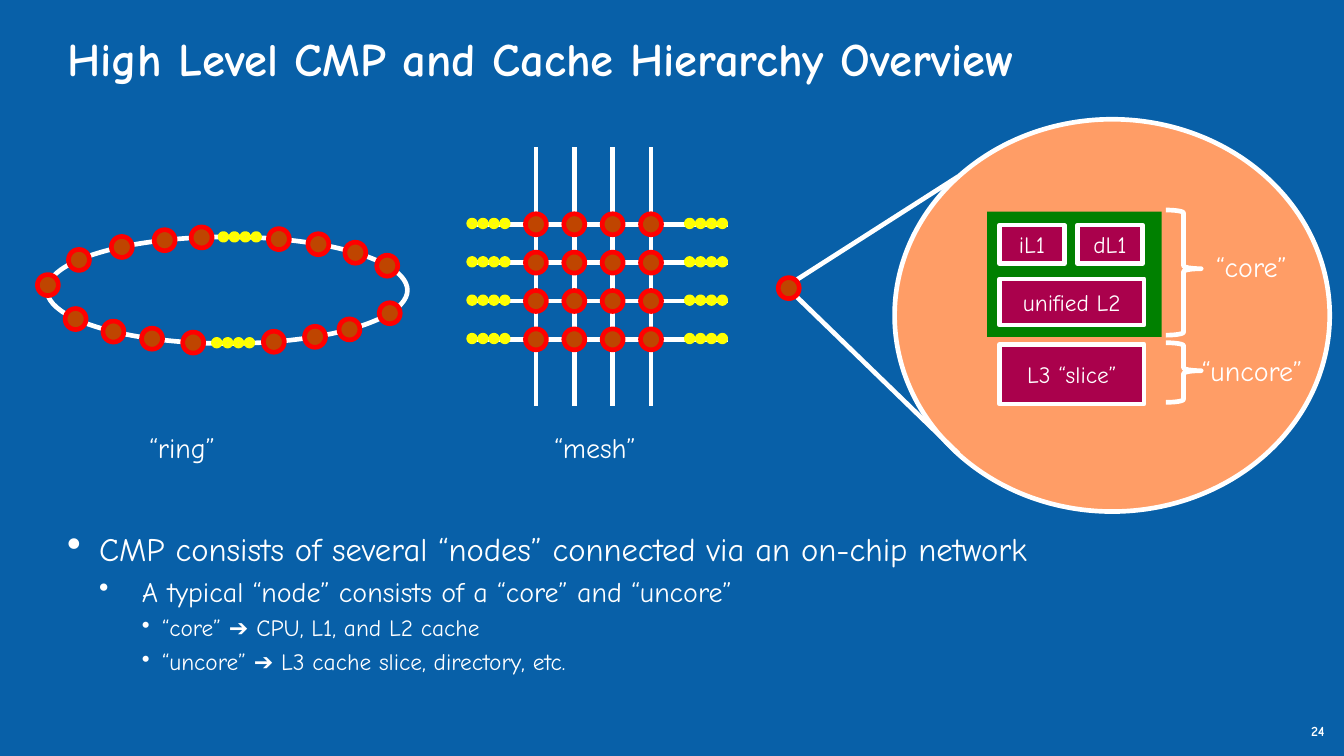
import dataclasses
import itertools
import math

import lxml.etree
import pptx
import pptx.dml.color
import pptx.enum.shapes
import pptx.enum.text
import pptx.oxml.ns
import pptx.util

Inches = pptx.util.Inches
Pt = pptx.util.Pt
Kind = pptx.enum.shapes.MSO_SHAPE
Align = pptx.enum.text.PP_ALIGN
Anchor = pptx.enum.text.MSO_ANCHOR
qn = pptx.oxml.ns.qn


@dataclasses.dataclass(frozen=True)
class Theme:
    face: str = "Comic Neue"
    back: str = "0860A8"
    ink: str = "FFFFFF"
    node: str = "BF4500"
    rim: str = "FF0000"
    dot: str = "F5E647"
    glow: str = "FFFF00"
    disc: str = "FF9D66"
    core: str = "008000"
    cache: str = "AA014C"
    title: int = 40
    label: int = 24
    cell: int = 20
    page: int = 12
    levels: tuple = (28, 24, 20)
    stroke: int = 4


THEME = Theme()
NODE, DOT, STEP = 0.25, 0.08, 0.13


def tint(code):
    return pptx.dml.color.RGBColor.from_string(code)


def style(thing, values):
    for name, value in values.items():
        setattr(thing, name, value)


def write(para, words, size, bold=False):
    run = para.add_run()
    run.text = words
    style(run.font, dict(name=THEME.face, size=Pt(size), bold=bold))
    run.font.color.rgb = tint(THEME.ink)


def text(slide, box, words, size, bold=False, pad=(0, 0)):
    frame = slide.shapes.add_textbox(*map(Inches, box)).text_frame
    side, top = map(Inches, pad)
    style(frame, dict(word_wrap=True, margin_left=side, margin_right=side,
                      margin_top=top, margin_bottom=top))
    if words:
        write(frame.paragraphs[0], words, size, bold)
    return frame


def label(slide, box, words):
    text(slide, box, words, THEME.label, pad=(0.1, 0.05))


def shape(slide, kind, box, fill=None, line=None):
    item = slide.shapes.add_shape(kind, *map(Inches, box))
    item.shadow.inherit = False
    if fill:
        item.fill.solid()
        item.fill.fore_color.rgb = tint(fill)
    else:
        item.fill.background()
    if line:
        item.line.color.rgb = tint(line)
        item.line.width = Pt(THEME.stroke)
    else:
        item.line.fill.background()
    return item


def link(slide, *ends):
    item = slide.shapes.add_connector(
        pptx.enum.shapes.MSO_CONNECTOR.STRAIGHT, *map(Inches, ends))
    item.line.color.rgb = tint(THEME.ink)
    item.line.width = Pt(THEME.stroke)
    lxml.etree.SubElement(item._element.spPr, qn("a:effectLst"))


def node(slide, x, y):
    box = (x - NODE / 2, y - NODE / 2, NODE, NODE)
    shape(slide, Kind.OVAL, box, THEME.node, THEME.rim)


def dots(slide, left, y):
    # Four dots stand for the nodes left out
    for i in range(4):
        box = (left + i * STEP, y - DOT / 2, DOT, DOT)
        shape(slide, Kind.OVAL, box, THEME.dot, THEME.glow)


def ring(slide, box):
    x, y, w, h = box
    shape(slide, Kind.OVAL, box, line=THEME.ink)
    mid, deep = w / 2, h / 2
    # Offsets along the top and bottom arcs; heights follow the ellipse
    arcs = {-1: (0.01, 0.38, 0.89, 1.4, 1.84, 2.76, 3.23, 3.67, 4.05),
            1: (0.34, 0.79, 1.25, 1.74, 2.7, 3.19, 3.6, 4.08)}
    for side, spots in arcs.items():
        for spot in spots:
            rise = math.sqrt(1 - ((spot - mid) / mid) ** 2)
            node(slide, x + spot, y + deep * (1 + side * rise))
    dots(slide, x + 2.06, y)
    dots(slide, x + 1.98, y + h - 0.01)
    label(slide, (x + 1.12, y + 2.26, 1.09, 0.51), "“ring”")


def mesh(slide, box):
    x, y, w, h = box
    pitch = 1.37 / 3
    cols = [x + 0.8 + i * pitch for i in range(4)]
    rows = [y + 0.92 + i * pitch for i in range(4)]
    for col in cols:
        link(slide, col, y, col, y + h)
    for row in rows:
        link(slide, x, row, x + w, row)
        dots(slide, x, row - 0.01)
        dots(slide, x + 2.59, row - 0.01)
    for row, col in itertools.product(rows, cols):
        node(slide, col, row)
    label(slide, (x + 0.92, y + 3.33, 1.28, 0.51), "“mesh”")


def zoom(slide, box):
    x, y, w, h = box
    shape(slide, Kind.OVAL, (x + 1.26, y, w - 1.26, h), THEME.disc, THEME.ink)
    # Rays from the small node to the disc
    link(slide, x + 0.08, y + 1.92, x + 2.02, y + 0.68)
    link(slide, x + 0.08, y + 2.1, x + 2.02, y + 3.98)
    node(slide, x, y + 2.01)
    shape(slide, Kind.RECTANGLE, (x + 2.36, y + 1.1, 2.08, 1.49), THEME.core)
    # Caches
    cells = (("iL1", 2.51, 1.26, 0.77, 0.46), ("dL1", 3.44, 1.26, 0.77, 0.46),
             ("unified L2", 2.51, 1.9, 1.72, 0.55),
             ("L3 “slice”", 2.51, 2.68, 1.72, 0.71))
    for words, left, top, wide, high in cells:
        cell = shape(slide, Kind.RECTANGLE, (x + left, y + top, wide, high),
                     THEME.cache, THEME.ink)
        frame = cell.text_frame
        style(frame, dict(word_wrap=False, vertical_anchor=Anchor.MIDDLE))
        frame.paragraphs[0].alignment = Align.CENTER
        write(frame.paragraphs[0], words, THEME.cell)
    # Braces and their names
    parts = (("“core”", 1.08, 1.49, 4.99, 1.5, 1.16),
             ("“uncore”", 2.66, 0.71, 4.82, 2.74, 1.52))
    for words, top, high, left, drop, wide in parts:
        brace = shape(slide, Kind.RIGHT_BRACE, (x + 4.49, y + top, 0.42, high),
                      line=THEME.ink)
        for i, value in enumerate((0.083, 0.469)):
            brace.adjustments[i] = value
        label(slide, (x + left, y + drop, wide, 0.51), words)


def points(slide, box):
    frame = text(slide, box, "", THEME.label)
    # Left edge, hanging indent and bullet size in percent by level
    forms = ((0.38, 0.38, 125), (0.89, 0.51, 100), (1.13, 0.24, 100))
    items = ((0, "CMP consists of several “nodes” connected via an on-chip network"),
             (1, "A typical “node” consists of a “core” and “uncore”"),
             (2, "“core” ➔ CPU, L1, and L2 cache"),
             (2, "“uncore” ➔ L3 cache slice, directory, etc."))
    for i, (level, words) in enumerate(items):
        para = frame.add_paragraph() if i else frame.paragraphs[0]
        left, hang, scale = forms[level]
        props = para._p.get_or_add_pPr()
        props.set("marL", str(Inches(left)))
        props.set("indent", str(-Inches(hang)))
        size = lxml.etree.SubElement(props, qn("a:buSzPct"))
        size.set("val", str(scale * 1000))
        lxml.etree.SubElement(props, qn("a:buChar")).set("char", "•")
        style(para, dict(level=level, space_before=Pt(5 if i else 0)))
        write(para, words, THEME.levels[level])


def main():
    deck = pptx.Presentation()
    style(deck, dict(slide_width=Inches(16), slide_height=Inches(9)))
    slide = deck.slides.add_slide(deck.slide_layouts[6])
    slide.background.fill.solid()
    slide.background.fill.fore_color.rgb = tint(THEME.back)
    text(slide, (0.8, 0.36, 14.41, 1.17),
         "High Level CMP and Cache Hierarchy Overview", THEME.title, True)
    ring(slide, (0.56, 2.82, 4.29, 1.27))
    mesh(slide, (5.58, 1.75, 3.09, 3.08))
    zoom(slide, (9.39, 1.42, 6.44, 4.67))
    points(slide, (0.8, 6.3, 14.41, 2.3))
    text(slide, (15.61, 8.6, 0.39, 0.4), "24", THEME.page, True)
    deck.save("out.pptx")


if __name__ == "__main__":
    main()
